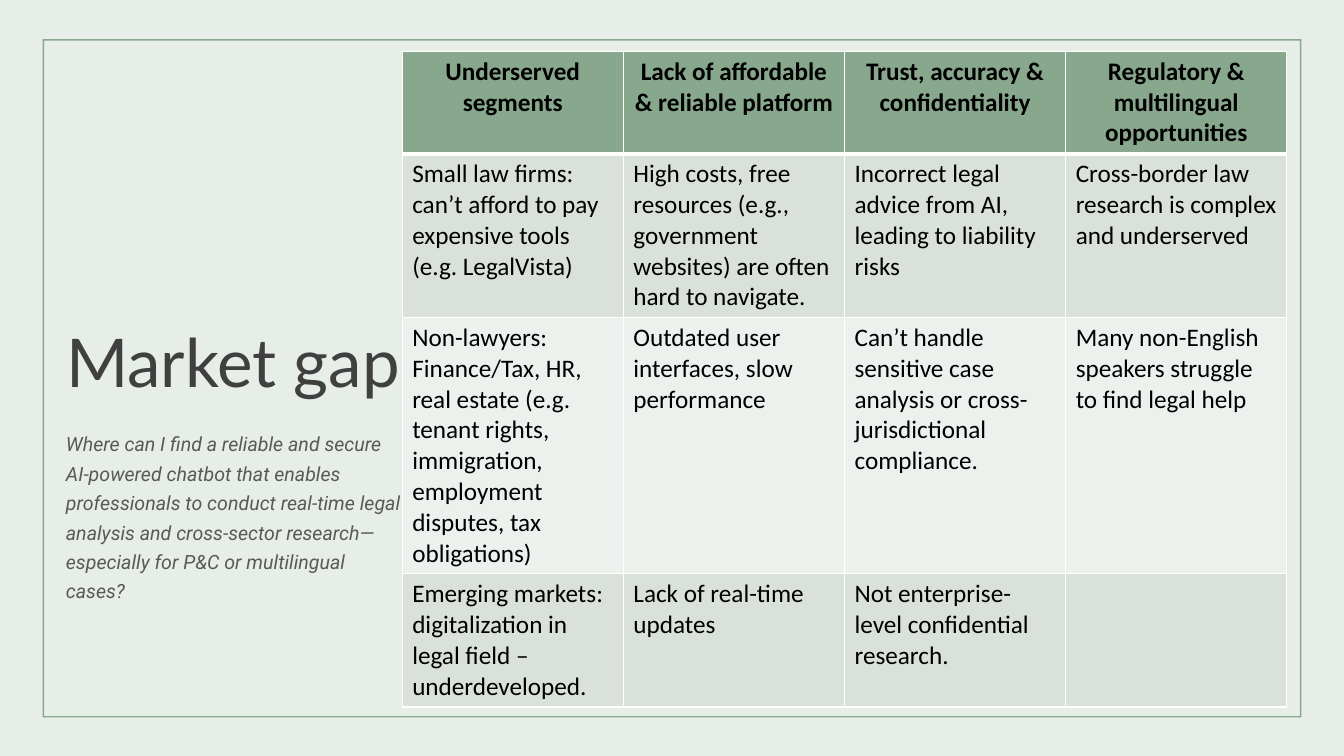
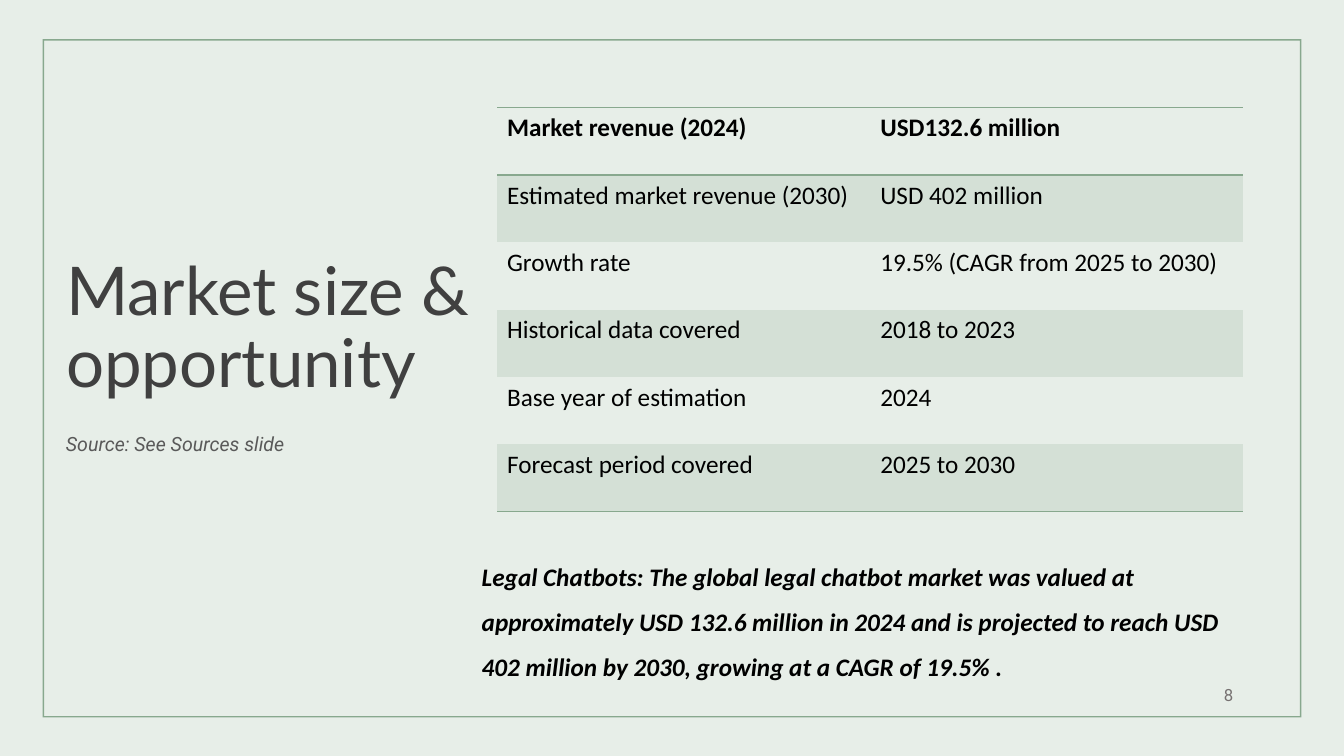
import pptx
import pptx.util
import pptx.dml.color
import pptx.enum.shapes
import pptx.enum.text
import pptx.oxml
import pptx.oxml.ns
from dataclasses import dataclass
from lxml import etree

Pt = pptx.util.Pt
ALIGN = pptx.enum.text.PP_ALIGN
ANCHOR = pptx.enum.text.MSO_ANCHOR


@dataclass(frozen=True)
class Theme:
    paper: str = "E7EEE8"
    sage: str = "88A88E"
    band: str = "DAE1DB"
    pale: str = "EDF1EE"
    tint: str = "D4E0D6"
    white: str = "FFFFFF"
    title = {"name": "Lato", "size": 48, "color": "404040"}
    caption = {"name": "Roboto", "size": 14, "color": "595959", "italic": True}
    number = {"name": "Roboto", "size": 12, "color": "767171"}
    cell = {"name": "Calibri", "size": 18, "color": "000000", "bold": False}
    head = {**cell, "bold": True}
    callout = {**head, "italic": True}


T = Theme()
TITLE_BOX = (40, 71, 378, 220)
CAPTION_BOX = (40, 301, 256, 163)
CALLOUT_BOX = (337, 387.5, 569, 102)
NUMBER_BOX = (672, 482, 216, 29)
FRAME_BOX = (30.5, 28, 899, 484.5)

WHITE_RULE, HEAD_RULE, SAGE_RULE = (T.white, 1), (T.white, 3), (T.sage, 1)

SLIDES = [
    {
        "title": "Market gap",
        "caption": "Where can I find a reliable and secure AI-powered chatbot that enables "
                   "professionals to conduct real-time legal analysis and cross-sector "
                   "research—especially for P&C or multilingual cases?",
        "table": {
            "origin": (287.3, 36.7),
            "column": 158,
            "heights": [73, 117, 183, 95],
            "fills": [T.sage, T.band, T.pale, T.band],
            "rules": [WHITE_RULE, HEAD_RULE, WHITE_RULE, WHITE_RULE, WHITE_RULE],
            "sides": WHITE_RULE,
            "head_align": ALIGN.CENTER,
            "rows": [
                ("Underserved segments", "Lack of affordable & reliable platform",
                 "Trust, accuracy & confidentiality",
                 "Regulatory & multilingual opportunities"),
                ("Small law firms: can’t afford to pay expensive tools (e.g. LegalVista)",
                 "High costs, free resources (e.g., government websites) are often hard "
                 "to navigate.",
                 "Incorrect legal advice from AI, leading to liability risks",
                 "Cross-border law research is complex and underserved"),
                ("Non-lawyers: Finance/Tax, HR, real estate (e.g. tenant rights, "
                 "immigration, employment disputes, tax obligations)",
                 "Outdated user interfaces, slow performance",
                 "Can’t handle sensitive case analysis or cross-jurisdictional compliance.",
                 "Many non-English speakers struggle to find legal help"),
                ("Emerging markets: digitalization in legal field – underdeveloped.",
                 "Lack of real-time updates",
                 "Not enterprise-level confidential research.", ""),
            ],
        },
    },
    {
        "title": "Market size & opportunity",
        "caption": "Source: See Sources slide",
        "callout": "Legal Chatbots: The global legal chatbot market was valued at approximately "
                   "USD 132.6 million in 2024 and is projected to reach USD 402 million by 2030, "
                   "growing at a CAGR of 19.5% .",
        "number": "8",
        "table": {
            "origin": (355, 77),
            "column": 266.6,
            "heights": [48.1] * 6,
            "fills": [None, T.tint] * 3,
            "rules": [SAGE_RULE, SAGE_RULE, None, None, None, None, SAGE_RULE],
            "sides": None,
            "head_align": ALIGN.LEFT,
            "rows": [
                ("Market revenue (2024)", "USD132.6 million"),
                ("Estimated market revenue (2030)", "USD 402 million"),
                ("Growth rate", "19.5% (CAGR from 2025 to 2030)"),
                ("Historical data covered", "2018 to 2023"),
                ("Base year of estimation", "2024"),
                ("Forecast period covered", "2025 to 2030"),
            ],
        },
    },
]


def rgb(value):
    return pptx.dml.color.RGBColor.from_string(value)


def write(tf, text, style, align=ALIGN.LEFT, spacing=None):
    p = tf.paragraphs[0]
    p.alignment = align
    if spacing:
        p.line_spacing = spacing
    if not text:
        return
    r = p.add_run()
    r.text = text
    for key, value in style.items():
        if key == "color":
            r.font.color.rgb = rgb(value)
        else:
            setattr(r.font, key, Pt(value) if key == "size" else value)


def place(sp, box):
    for key, value in zip(("left", "top", "width", "height"), box):
        setattr(sp, key, Pt(value))


def fill_text(sp, box, text, style, anchor=ANCHOR.TOP, **paragraph):
    place(sp, box)
    tf = sp.text_frame
    tf.word_wrap = True
    tf.auto_size = pptx.enum.text.MSO_AUTO_SIZE.NONE
    tf.vertical_anchor = anchor
    write(tf, text, style, **paragraph)


def add_text(s, box, *args, **kwargs):
    fill_text(s.shapes.add_textbox(*map(Pt, box)), box, *args, **kwargs)


def add_frame(s):
    sp = s.shapes.add_shape(pptx.enum.shapes.MSO_SHAPE.FRAME, *map(Pt, FRAME_BOX))
    sp.adjustments[0] = 0.002
    sp.shadow.inherit = False
    sp.fill.solid()
    sp.fill.fore_color.rgb = rgb(T.sage)
    sp.line.fill.background()


def set_border(cell, side, rule):
    qn = pptx.oxml.ns.qn
    ln = etree.SubElement(cell._tc.get_or_add_tcPr(), qn("a:ln" + side))
    if rule is None:
        etree.SubElement(ln, qn("a:noFill"))
        return
    color, width = rule
    ln.set("w", str(Pt(width)))
    solid = etree.SubElement(ln, qn("a:solidFill"))
    etree.SubElement(solid, qn("a:srgbClr")).set("val", color)


def add_table(s, spec):
    rows, heights = spec["rows"], spec["heights"]
    columns = len(rows[0])
    size = (spec["column"] * columns, sum(heights))
    table = s.shapes.add_table(len(rows), columns, *map(Pt, spec["origin"] + size)).table
    for column in table.columns:
        column.width = Pt(spec["column"])
    for i, texts in enumerate(rows):
        table.rows[i].height = Pt(heights[i])
        style, align = (T.cell, ALIGN.LEFT) if i else (T.head, spec["head_align"])
        borders = {"L": spec["sides"], "R": spec["sides"],
                   "T": spec["rules"][i], "B": spec["rules"][i + 1]}
        for j, text in enumerate(texts):
            cell = table.cell(i, j)
            for side, rule in borders.items():
                set_border(cell, side, rule)
            if spec["fills"][i]:
                cell.fill.solid()
                cell.fill.fore_color.rgb = rgb(spec["fills"][i])
            else:
                cell.fill.background()
            write(cell.text_frame, text, style, align)


def add_slide(prs, content):
    s = prs.slides.add_slide(prs.slide_layouts[5])
    add_frame(s)
    fill_text(s.shapes.title, TITLE_BOX, content["title"], T.title, ANCHOR.BOTTOM, spacing=0.9)
    add_text(s, CAPTION_BOX, content["caption"], T.caption, spacing=1.25)
    if "callout" in content:
        add_text(s, CALLOUT_BOX, content["callout"], T.callout, ANCHOR.MIDDLE, spacing=1.5)
    if "number" in content:
        add_text(s, NUMBER_BOX, content["number"], T.number, ANCHOR.MIDDLE, align=ALIGN.RIGHT)
    add_table(s, content["table"])


def main():
    prs = pptx.Presentation()
    prs.slide_width, prs.slide_height = Pt(960), Pt(540)
    background = prs.slide_master.background.fill
    background.solid()
    background.fore_color.rgb = rgb(T.paper)
    for content in SLIDES:
        add_slide(prs, content)
    prs.save("out.pptx")


if __name__ == "__main__":
    main()
